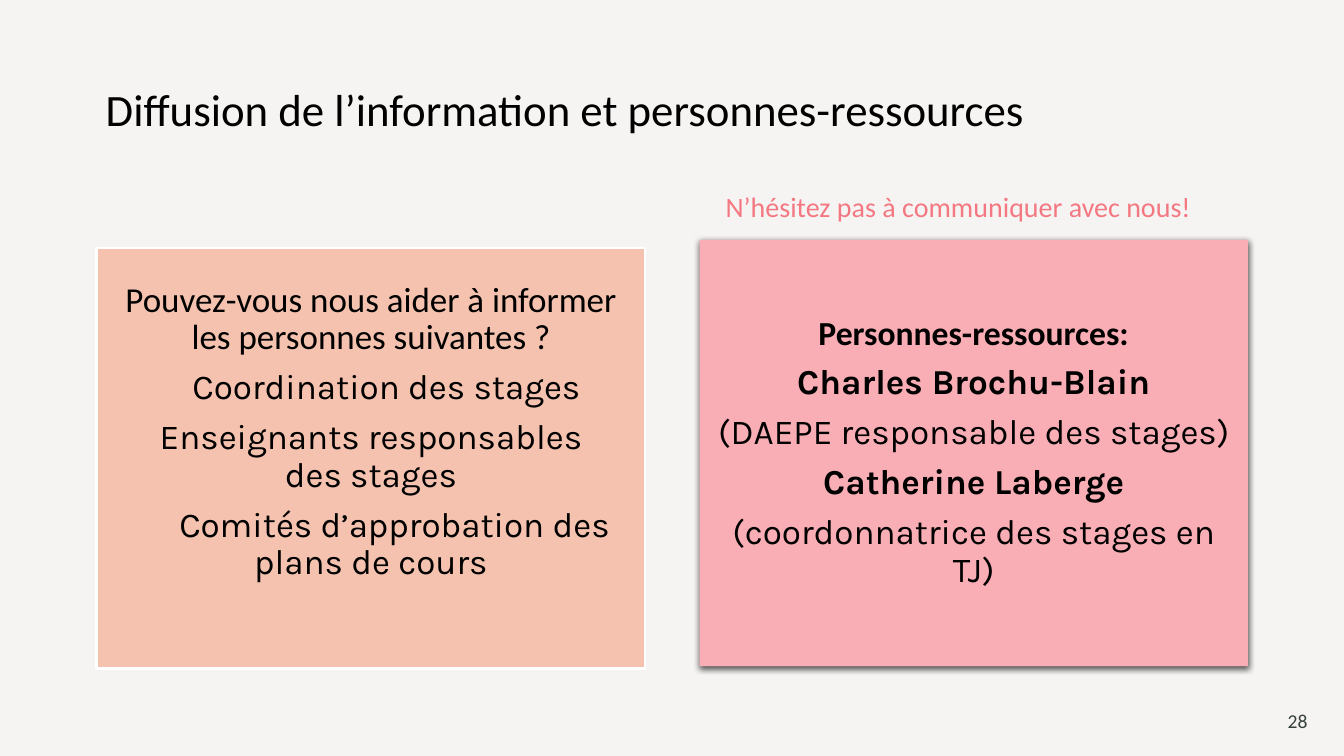
from dataclasses import dataclass

from lxml.etree import SubElement as Sub
from pptx import Presentation
from pptx.dml.color import RGBColor as Rgb
from pptx.enum.shapes import MSO_SHAPE as Kind
from pptx.enum.text import MSO_ANCHOR as Anchor, PP_ALIGN as Align
from pptx.oxml.ns import qn
from pptx.util import Inches, Pt

WIDE, HIGH = Inches(13.33), Inches(7.5)
HUES = {
    "page": "F6F4F2", "peach": "F4C2AE", "pink": "F8AEB4", "white": "FFFFFF",
    "black": "000000", "coral": "F47882", "grey": "35403A",
}
FLAT = {"space_after": Pt(0)}
LIST = {"alignment": Align.CENTER, "line_spacing": 0.9, "space_after": Pt(8.6)}


@dataclass
class Area:
    """A place in percent of the slide's width and height."""
    left: float
    top: float
    width: float
    height: float

    def emu(self) -> tuple[int, int, int, int]:
        return (int(WIDE * self.left / 100), int(HIGH * self.top / 100),
                int(WIDE * self.width / 100), int(HIGH * self.height / 100))


@dataclass
class Line:
    text: str
    size: float = 25
    face: str = "Karla"
    bold: bool = False
    hue: str = "black"
    shift: float = 0  # first-line indent, percent of the slide's width


@dataclass
class Card:
    area: Area
    fill: str
    lines: list[Line]
    edge: str = ""
    foot: float = 1.33  # bottom inset, percent of the slide's height


@dataclass
class Label:
    area: Area
    line: Line
    align: Align = Align.LEFT
    anchor: Anchor = Anchor.TOP
    wrap: bool = True


CARDS = [
    Card(Area(7.2, 32.8, 40.8, 55.6), "peach", [
        Line("Pouvez-vous nous aider à informer les personnes suivantes ?",
             face="Calibri"),
        Line("Coordination des stages", shift=2.3),
        Line("Enseignants responsables\vdes stages", shift=-3.4),
        Line("Comités d’approbation des plans de cours", shift=3.5),
    ], edge="white", foot=8.2),
    Card(Area(52.05, 31.73, 40.8, 56.4), "pink", [
        Line("Personnes-ressources:", 24, "Calibri", True),
        Line("Charles Brochu-Blain", bold=True, shift=-0.65),
        Line("(DAEPE responsable des stages)"),
        Line("Catherine Laberge", bold=True, shift=-0.65),
        Line("(coordonnatrice des stages en TJ)"),
    ]),
]
LABELS = [
    Label(Area(7.13, 8.53, 85.73, 10),
          Line("Diffusion de l’information et personnes-ressources", 32, "Calibri"),
          anchor=Anchor.BOTTOM),
    Label(Area(93.75, 92.67, 4.28, 5.33), Line("28", 14, "Calibri", hue="grey"),
          Align.RIGHT, Anchor.MIDDLE),
    Label(Area(53.25, 24.4, 38.32, 5.87),
          Line("N’hésitez pas à communiquer avec nous!", 20, "Calibri", hue="coral"),
          wrap=False),
]


def style(item, form: dict) -> None:
    for key, value in form.items():
        setattr(item, key, value)


def tint(hue: str) -> Rgb:
    return Rgb.from_string(HUES[hue])


def write(frame, lines: list[Line], form: dict) -> None:
    for i, line in enumerate(lines):
        para = frame.add_paragraph() if i else frame.paragraphs[0]
        para.text = line.text
        style(para, form)
        if line.shift:
            props = para._p.get_or_add_pPr()
            props.set("marL", "0")
            props.set("indent", str(int(WIDE * line.shift / 100)))
        for run in para.runs:
            style(run.font, {"name": line.face, "size": Pt(line.size),
                             "bold": line.bold})
            run.font.color.rgb = tint(line.hue)


def shade(shape) -> None:
    """Give the shape a soft shadow straight below it."""
    effects = shape._element.spPr.find(qn("a:effectLst"))
    cast = Sub(effects, qn("a:outerShdw"), blurRad=str(Pt(4.5)),
               dist=str(Pt(1.5)), dir="5400000", algn="ctr", rotWithShape="0")
    color = Sub(cast, qn("a:srgbClr"), val=HUES["black"])
    Sub(color, qn("a:alpha"), val="63000")


def draw_card(slide, card: Card) -> None:
    box = slide.shapes.add_shape(Kind.RECTANGLE, *card.area.emu())
    box.shadow.inherit = False
    box.fill.solid()
    box.fill.fore_color.rgb = tint(card.fill)
    if card.edge:
        box.line.color.rgb = tint(card.edge)
        box.line.width = Pt(2)
    else:
        box.line.fill.background()
        shade(box)
    pad = int(HIGH * 1.33 / 100)
    style(box.text_frame, {
        "word_wrap": True, "vertical_anchor": Anchor.MIDDLE,
        "margin_left": pad, "margin_right": pad, "margin_top": pad,
        "margin_bottom": int(HIGH * card.foot / 100)})
    write(box.text_frame, card.lines, LIST)


def draw_label(slide, label: Label) -> None:
    frame = slide.shapes.add_textbox(*label.area.emu()).text_frame
    style(frame, {"word_wrap": label.wrap, "vertical_anchor": label.anchor})
    write(frame, [label.line], FLAT | {"alignment": label.align})


def main() -> None:
    deck = Presentation()
    style(deck, {"slide_width": WIDE, "slide_height": HIGH})
    slide = deck.slides.add_slide(deck.slide_layouts[6])

    # Page colour
    page = slide.background.fill
    page.solid()
    page.fore_color.rgb = tint("page")

    # Cards, then title, page number and invitation
    for card in CARDS:
        draw_card(slide, card)
    for label in LABELS:
        draw_label(slide, label)
    deck.save("out.pptx")


if __name__ == "__main__":
    main()
